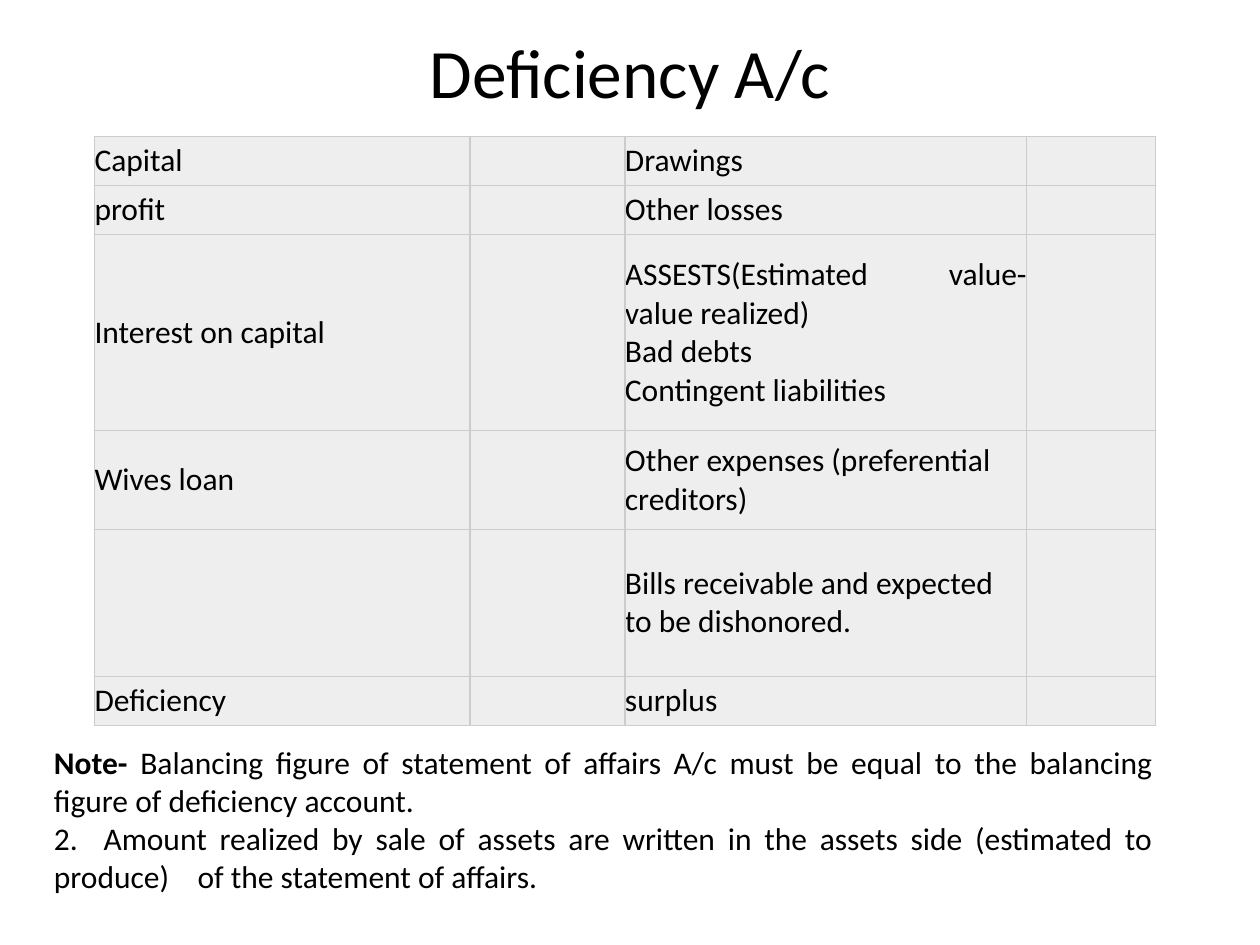
import pptx
import pptx.dml.color
import pptx.enum.text
import pptx.oxml
import pptx.oxml.ns
import pptx.util

COLOURS = {"text": "000000", "cell": "EEEEEE", "border": "CCCCCC"}
ALIGN = pptx.enum.text.PP_ALIGN
ANCHOR = pptx.enum.text.MSO_ANCHOR
GRID = 100
ROW_UNIT = 5.2
COLUMN_WIDTHS = [29.8, 12.3, 31.9, 10.2]
ROW_UNITS = [1, 1, 4, 2, 3, 1]
ENTRIES = [
    (["Capital"], ["Drawings"]),
    (["profit"], ["Other losses"]),
    (["Interest on capital"],
     ["ASSESTS(Estimated value- value realized)", "Bad debts", "Contingent liabilities"]),
    (["Wives loan"], ["Other expenses (preferential creditors)"]),
    ([], ["Bills receivable and expected to be dishonored."]),
    (["Deficiency"], ["surplus"]),
]
NOTES = [
    [("Note-", True),
     (" Balancing figure of statement of affairs A/c must be equal to the balancing "
      "figure of deficiency account.", False)],
    [("2.  Amount realized by sale of assets are written in the assets side "
      "(estimated to produce)    of the statement of affairs.", False)],
]


def apply(target, values):
    for name, value in values.items():
        setattr(target, name, value)


def colour(name):
    return pptx.dml.color.RGBColor.from_string(COLOURS[name])


class SlideBuilder:
    font = "Calibri"
    size = 18
    border = 0.75

    def __init__(self, deck):
        self.deck = deck
        self.page = deck.slides.add_slide(deck.slide_layouts[6])

    def across(self, columns):
        return round(self.deck.slide_width * columns / GRID)

    def down(self, rows):
        return round(self.deck.slide_height * rows / GRID)

    def fill_text(self, frame, paragraphs, align, size=None):
        for index, spans in enumerate(paragraphs):
            para = frame.add_paragraph() if index else frame.paragraphs[0]
            para.alignment = align
            for text, bold in spans:
                span = para.add_run()
                span.text = text
                apply(span.font, {"name": self.font, "bold": bold,
                                  "size": pptx.util.Pt(size or self.size)})
                span.font.color.rgb = colour("text")

    def text(self, left, top, width, height, paragraphs, align, anchor, size=None):
        box = self.page.shapes.add_textbox(
            self.across(left), self.down(top), self.across(width), self.down(height))
        apply(box.text_frame, {"word_wrap": True, "vertical_anchor": anchor})
        self.fill_text(box.text_frame, paragraphs, align, size)

    def outline(self, cell):
        properties = cell._tc.get_or_add_tcPr()
        for position, side in enumerate(("lnL", "lnR", "lnT", "lnB")):
            line = pptx.oxml.parse_xml(
                f'<a:{side} {pptx.oxml.ns.nsdecls("a")} w="{pptx.util.Pt(self.border)}">'
                f'<a:solidFill><a:srgbClr val="{COLOURS["border"]}"/></a:solidFill></a:{side}>')
            properties.insert(position, line)

    def cell(self, cell, lines):
        apply(cell, {"margin_left": 0, "margin_right": 0, "margin_top": 0,
                     "margin_bottom": 0, "vertical_anchor": ANCHOR.MIDDLE})
        cell.fill.solid()
        cell.fill.fore_color.rgb = colour("cell")
        self.outline(cell)
        align = ALIGN.JUSTIFY if len(lines) > 1 else ALIGN.LEFT
        self.fill_text(cell.text_frame, [[(line, False)] for line in lines], align)

    def table(self, left, top, widths, heights, rows):
        table = self.page.shapes.add_table(
            len(heights), len(widths), self.across(left), self.down(top),
            self.across(sum(widths)), self.down(sum(heights))).table
        apply(table, {"first_row": False, "horz_banding": False})
        for column, width in zip(table.columns, widths):
            column.width = self.across(width)
        for row, height, values in zip(table.rows, heights, rows):
            row.height = self.down(height)
            for cell, lines in zip(row.cells, values):
                self.cell(cell, lines)


def main():
    deck = pptx.Presentation()
    apply(deck, {"slide_width": pptx.util.Inches(10), "slide_height": pptx.util.Inches(7.5)})
    builder = SlideBuilder(deck)
    builder.text(5, 4, 90, 7.07, [[("Deficiency A/c", False)]],
                 ALIGN.CENTER, ANCHOR.MIDDLE, 39.6)
    builder.table(7.5, 14.4, COLUMN_WIDTHS, [units * ROW_UNIT for units in ROW_UNITS],
                  [(debit, [], credit, []) for debit, credit in ENTRIES])
    builder.text(3.3, 78, 89.2, 17.47, NOTES, ALIGN.JUSTIFY, ANCHOR.TOP)
    deck.save("out.pptx")


if __name__ == "__main__":
    main()
